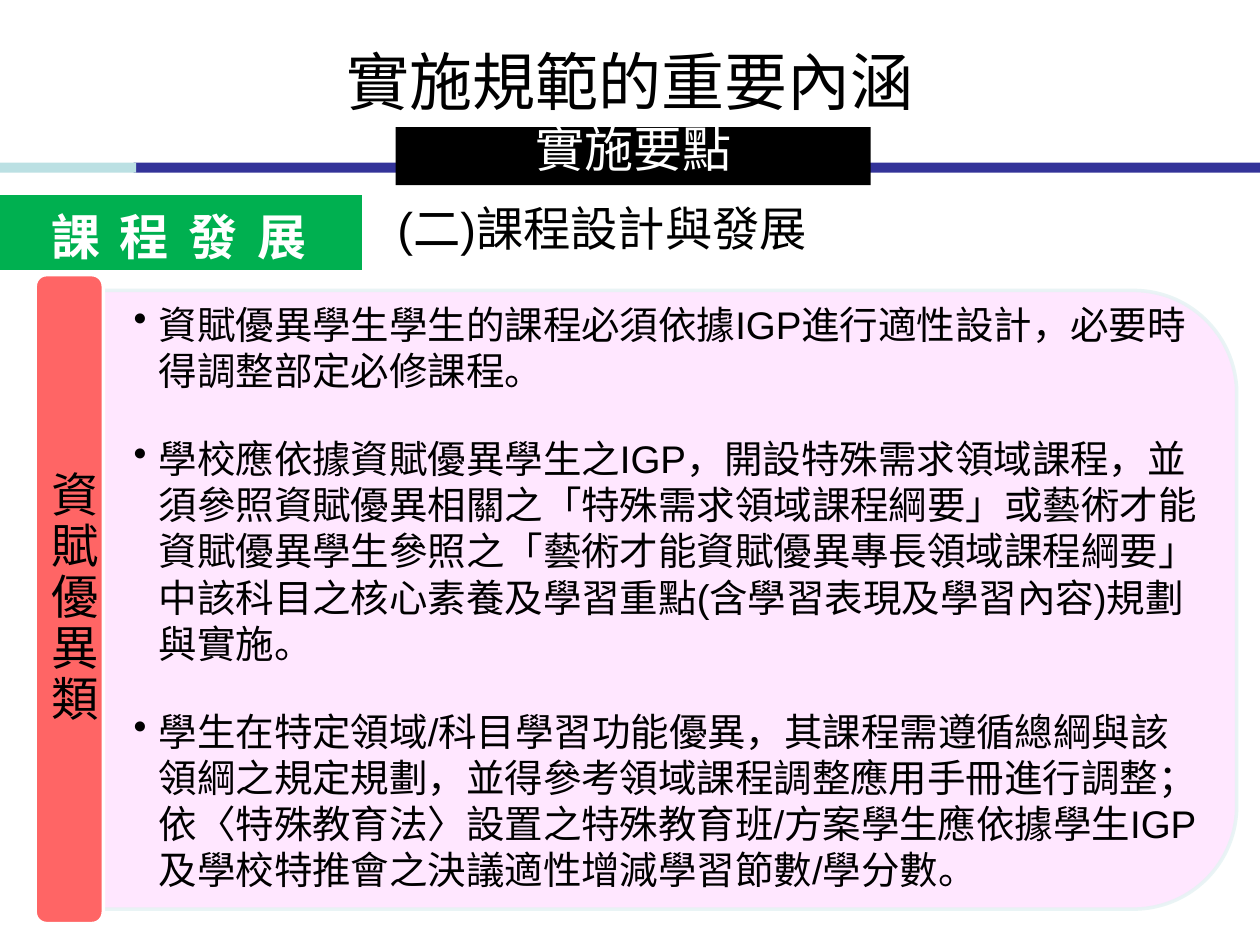
"""Build the slide on curriculum design for gifted students."""
from lxml import etree
from pptx import Presentation
from pptx import util as u
from pptx.dml.color import RGBColor
from pptx.enum import shapes, text
from pptx.oxml import ns

BLACK = RGBColor(0, 0, 0)
WHITE = RGBColor(255, 255, 255)
NAVY = RGBColor(0x33, 0x33, 0x99)
AQUA = RGBColor(0xBB, 0xE0, 0xE3)
GREEN = RGBColor(0x00, 0xB0, 0x50)
PINK = RGBColor(0xFF, 0xE5, 0xFF)
MIST = RGBColor(0xE7, 0xF3, 0xF4)
CORAL = RGBColor(0xFF, 0x65, 0x65)
LATIN, HAN = "Arial", "Noto Sans CJK TC"
KIND = shapes.MSO_SHAPE
MIDDLE = text.MSO_ANCHOR.MIDDLE
TOP = text.MSO_ANCHOR.TOP
CENTER = text.PP_ALIGN.CENTER
LEFT = text.PP_ALIGN.LEFT

POINTS = [
    "資賦優異學生學生的課程必須依據IGP進行適性設計，必要時得調整部定必修課程。",
    "學校應依據資賦優異學生之IGP，開設特殊需求領域課程，並須參照資賦優異相關之「特殊需求領域課程綱要」或藝術才能資賦優異學生參照之「藝術才能資賦優異專長領域課程綱要」中該科目之核心素養及學習重點(含學習表現及學習內容)規劃與實施。",
    "學生在特定領域/科目學習功能優異，其課程需遵循總綱與該領綱之規定規劃，並得參考領域課程調整應用手冊進行調整；依〈特殊教育法〉設置之特殊教育班/方案學生應依據學生IGP及學校特推會之決議適性增減學習節數/學分數。",
]


def apply(item, values):
    """Set each named attribute on the item."""
    for name, value in values.items():
        setattr(item, name, value)


def fade(color, percent):
    """Make a solid colour partly transparent."""
    etree.SubElement(color, ns.qn("a:alpha"), val=str(percent * 1000))


class Deck:
    """Hold the style and the current slide."""

    def __init__(self):
        self.show = Presentation()
        apply(self.show, {"slide_width": u.Inches(10), "slide_height": u.Inches(7.5)})
        self.slide = self.show.slides.add_slide(self.show.slide_layouts[6])
        self.font = {"name": LATIN, "size": u.Pt(27), "bold": False}

    def block(self, kind, at, fill, line=None, turn=0, alpha=100):
        """Add a filled shape."""
        shape = self.slide.shapes.add_shape(kind, *map(u.Inches, at))
        shape.shadow.inherit = False
        shape.rotation = turn
        shape.fill.solid()
        shape.fill.fore_color.rgb = fill
        if line:
            shape.line.color.rgb = line
            shape.line.width = u.Pt(2)
        else:
            shape.line.fill.background()
        if alpha < 100:
            for color in shape._element.spPr.findall(".//" + ns.qn("a:srgbClr")):
                fade(color, alpha)
        return shape

    def label(self, at, lines, **style):
        """Add a text box."""
        box = self.slide.shapes.add_textbox(*map(u.Inches, at))
        self.letter(box, lines, **style)

    def letter(self, shape, lines, font=None, color=BLACK, anchor=MIDDLE,
               align=CENTER, inset=(0.1, 0.05), gap=0, para=None,
               bullet=False, track=0):
        """Fill a shape with styled paragraphs."""
        frame = shape.text_frame
        side, edge = map(u.Inches, inset)
        apply(frame, {"word_wrap": True, "vertical_anchor": anchor,
                      "margin_left": side, "margin_right": side,
                      "margin_top": edge, "margin_bottom": edge})
        for i, line in enumerate(lines):
            p = frame.add_paragraph() if i else frame.paragraphs[0]
            apply(p, {"alignment": align, "space_before": u.Pt(gap if i else 0),
                      "space_after": u.Pt(gap), **(para or {})})
            if bullet:
                self.bullet(p)
            run = p.add_run()
            run.text = line
            apply(run.font, {**self.font, **(font or {})})
            run.font.color.rgb = color
            if track:
                run._r.get_or_add_rPr().set("spc", str(track))

    def bullet(self, p):
        """Give a paragraph a hanging bullet."""
        props = p._p.get_or_add_pPr()
        hang = u.Inches(0.2)
        props.set("marL", str(hang))
        props.set("indent", str(-hang))
        etree.SubElement(props, ns.qn("a:buChar"), char="•")


def main():
    deck = Deck()
    deck.block(KIND.RECTANGLE, (1.06, 1.29, 8.98, 0.08), NAVY)
    deck.block(KIND.RECTANGLE, (0, 1.29, 1.08, 0.08), AQUA)
    deck.label((0, 0.29, 10, 0.71), ["實施規範的重要內涵"], anchor=TOP,
               font={"name": HAN, "size": u.Pt(36)})

    tab = deck.block(KIND.TRAPEZOID, (0, 1.55, 2.87, 0.59), GREEN, turn=180)
    tab.adjustments[0] = 0
    deck.label((0.2, 1.43, 2.44, 0.79), ["課 程 發 展"], color=WHITE,
               inset=(0, 0), para={"line_spacing": 1.2}, track=250,
               font={"size": u.Pt(28), "bold": True})
    deck.label((0.28, 1.55, 9, 0.52), ["(二)課程設計與發展"])

    deck.block(KIND.ROUND_2_SAME_RECTANGLE, (2.85, 0.25, 4.91, 9.02), PINK,
               line=MIST, turn=90, alpha=90)
    deck.label((0.79, 2.49, 9.02, 4.49), POINTS, align=LEFT, gap=12,
               inset=(0.27, 0.14), bullet=True, font={"size": u.Pt(22)})

    deck.block(KIND.ROUNDED_RECTANGLE, (0.28, 2.18, 0.54, 5.15), CORAL, line=WHITE)
    deck.label((0.3, 2.43, 0.49, 4.65), ["資賦優異類"], inset=(0.11, 0.06),
               para={"line_spacing": 0.9})

    band = deck.block(KIND.RECTANGLE, (3.14, 1.01, 3.77, 0.46), BLACK)
    deck.letter(band, ["實施要點"], color=WHITE, anchor=TOP,
                para={"line_spacing": u.Pt(25)},
                font={"name": HAN, "size": u.Pt(28)})
    deck.show.save("out.pptx")


if __name__ == "__main__":
    main()
